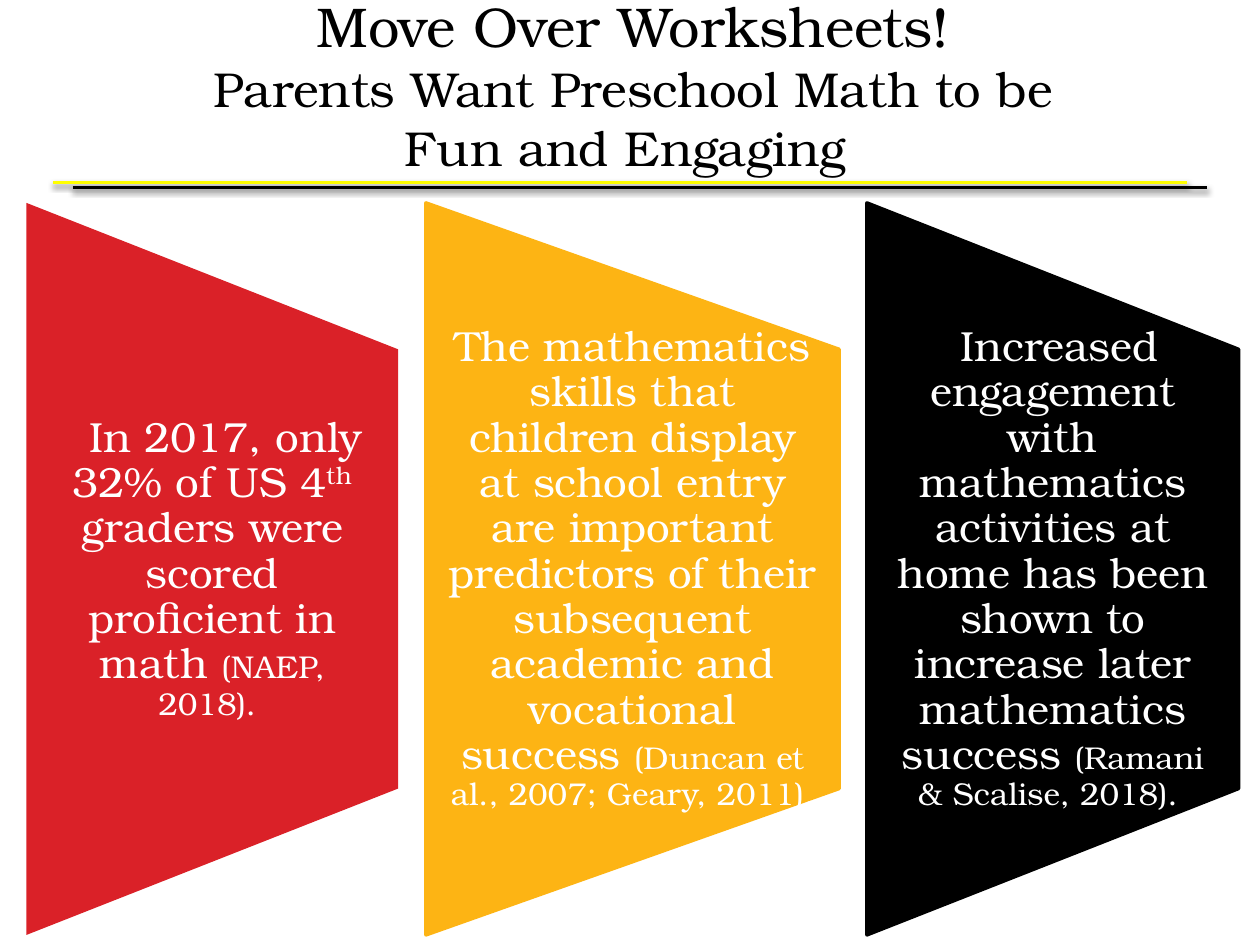
from dataclasses import dataclass

from lxml import etree
from pptx import Presentation
from pptx.dml.color import RGBColor
from pptx.enum.shapes import MSO_CONNECTOR, MSO_SHAPE
from pptx.enum.text import MSO_ANCHOR, PP_ALIGN
from pptx.oxml.ns import qn
from pptx.util import Inches, Pt

LINE = MSO_CONNECTOR.STRAIGHT
PANEL = MSO_SHAPE.FLOWCHART_MANUAL_OPERATION
MIDDLE = MSO_ANCHOR.MIDDLE
CENTER = PP_ALIGN.CENTER

FONT = "TeX Gyre Bonum"
COLORS = {"red": "DA2128", "gold": "FDB414", "black": "000000",
          "white": "FFFFFF", "yellow": "FFFF00"}
WIDE, HIGH = 10, 7.5
LEFT, GAP = 0.21, 0.22  # first panel edge, space between panels
TOP, TALL = 1.61, 5.81  # panel rows
INSET = 0.17


@dataclass
class Phrase:
    text: str
    size: int
    raised: bool = False


@dataclass
class Card:
    color: str
    width: float
    edged: bool
    phrases: list[Phrase]


@dataclass
class Rule:
    color: str
    left: float
    top: float


CARDS = [
    Card("red", 2.95, False, [
        Phrase("  In 2017, only 32% of US 4", 24),
        Phrase("th", 24, True),
        Phrase(" graders were scored proficient in math ", 24),
        Phrase("(NAEP, 2018). ", 18)]),
    Card("gold", 3.28, True, [
        Phrase("The mathematics skills that children display at school entry "
               "are important predictors of their subsequent academic and "
               "vocational success ", 24),
        Phrase("(Duncan et al., 2007; Geary, 2011). ", 18)]),
    Card("black", 2.95, True, [
        Phrase(" Increased engagement with mathematics activities at home has "
               "been shown to increase later mathematics success ", 24),
        Phrase("(Ramani & Scalise, 2018). ", 18)]),
]
TITLE = [Phrase("Move Over Worksheets!", 32),
         Phrase("Parents Want Preschool Math to be Fun and Engaging ", 28)]
RULES = [Rule("black", 0.58, 1.49), Rule("yellow", 0.42, 1.45)]


def rgb(name: str) -> RGBColor:
    return RGBColor.from_string(COLORS[name])


def add_shade(line) -> None:
    """Give a line a soft shadow straight below it."""
    props = line._element.spPr
    effects = etree.SubElement(props, qn("a:effectLst"))
    shade = etree.SubElement(effects, qn("a:outerShdw"), blurRad=str(Pt(3.1)),
                             dist=str(Pt(1.6)), dir="5400000", rotWithShape="0")
    color = etree.SubElement(shade, qn("a:srgbClr"), val=COLORS["black"])
    etree.SubElement(color, qn("a:alpha"), val="38000")


def draw_rule(slide, rule: Rule) -> None:
    y = Inches(rule.top)
    line = slide.shapes.add_connector(
        LINE, Inches(rule.left), y, Inches(rule.left + 0.9 * WIDE), y)
    line.line.color.rgb = rgb(rule.color)
    line.line.width = Pt(2)
    add_shade(line)


def draw_text(slide, box: tuple, phrases: list[Phrase], color: str,
              side: float, edge: float, space: float, split: bool) -> None:
    """Write centred phrases in one paragraph, each on its own line if split."""
    frame = slide.shapes.add_textbox(*map(Inches, box)).text_frame
    frame.word_wrap = True
    frame.vertical_anchor = MIDDLE
    frame.margin_left = frame.margin_right = Inches(side)
    frame.margin_top = frame.margin_bottom = Inches(edge)
    para = frame.paragraphs[0]
    para.alignment = CENTER
    para.line_spacing = space
    para.font.name = FONT
    para.font.color.rgb = rgb(color)
    for i, phrase in enumerate(phrases):
        if split and i:
            para.add_line_break()
        run = para.add_run()
        run.text = phrase.text
        run.font.size = Pt(phrase.size)
        if phrase.raised:
            run._r.get_or_add_rPr().set("baseline", "30000")


def draw_card(slide, card: Card, left: float) -> None:
    # The shape is turned a quarter, so its width is the panel's height.
    x = left + (card.width - TALL) / 2
    y = TOP + (TALL - card.width) / 2
    panel = slide.shapes.add_shape(
        PANEL, Inches(x), Inches(y), Inches(TALL), Inches(card.width))
    panel.rotation = 270
    panel.shadow.inherit = False
    panel.fill.solid()
    panel.fill.fore_color.rgb = rgb(card.color)
    if card.edged:
        panel.line.color.rgb = rgb(card.color)
        panel.line.width = Pt(2)
    else:
        panel.line.fill.background()
    box = (left, TOP + 0.2 * TALL, card.width, 0.6 * TALL)
    draw_text(slide, box, card.phrases, "white", INSET, 0, 0.9, False)


def main() -> None:
    deck = Presentation()
    deck.slide_width, deck.slide_height = Inches(WIDE), Inches(HIGH)
    slide = deck.slides.add_slide(deck.slide_layouts[6])
    for rule in RULES:
        draw_rule(slide, rule)
    left = LEFT
    for card in CARDS:
        draw_card(slide, card, left)
        left += card.width + GAP
    draw_text(slide, (1.2, 0.04, 7.65, 1.25), TITLE, "black",
              0.1, 0.05, 1.0, True)
    deck.save("out.pptx")


if __name__ == "__main__":
    main()
